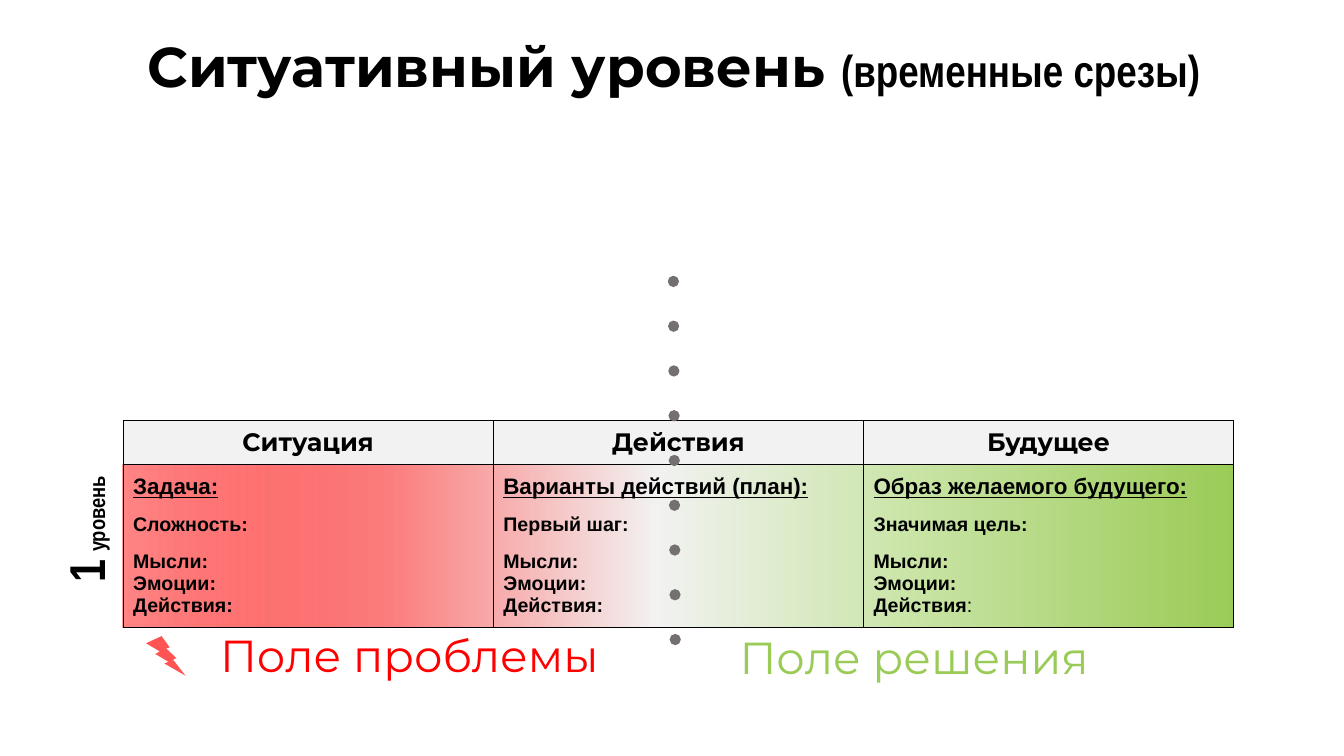
"""Build a slide with a table of time slices for the situational level."""
from dataclasses import dataclass

from lxml import etree
from pptx import Presentation
from pptx.dml.color import RGBColor
from pptx.enum.shapes import MSO_CONNECTOR, MSO_SHAPE
from pptx.enum.text import MSO_ANCHOR, MSO_AUTO_SIZE, PP_ALIGN
from pptx.oxml.ns import qn
from pptx.util import Cm, Pt

BOLT = MSO_SHAPE.LIGHTNING_BOLT
RECTANGLE = MSO_SHAPE.RECTANGLE
STRAIGHT = MSO_CONNECTOR.STRAIGHT
TOP, MIDDLE = MSO_ANCHOR.TOP, MSO_ANCHOR.MIDDLE
GROW = MSO_AUTO_SIZE.SHAPE_TO_FIT_TEXT
LEFT, CENTER = PP_ALIGN.LEFT, PP_ALIGN.CENTER

COLORS = {
    "black": "000000",
    "red": "FF0000",
    "rose": "FB8181",
    "light": "F2F2F2",
    "pale green": "CBE5A9",
    "green": "9ACB56",
    "gray": "757070",
}
DISPLAY, NARROW, BODY = "Montserrat", "Arial Narrow", "Arial"
TABLE_LEFT, TABLE_TOP = 3.1, 10.6
COLUMN_WIDTH, HEADER_HEIGHT, BODY_HEIGHT = 9.33, 1.1, 4.1
GROUP_GAP = Pt(10.35)


@dataclass
class Span:
    """A stretch of text in one style."""
    text: str
    size: int
    font: str = BODY
    color: str = "black"
    bold: bool = True
    underline: bool = False


@dataclass
class Label:
    """A one-line text box, measured in centimetres."""
    left: float
    top: float
    width: float
    height: float
    spans: list[Span]
    align: PP_ALIGN = CENTER
    rotation: int = 0


@dataclass
class Slice:
    """A column of the table."""
    heading: str
    subject: str
    detail: str
    colon_bold: bool = True


@dataclass
class Stop:
    """A point of the gradient, in percent."""
    position: int
    color: str
    opacity: int = 100


LABELS = [
    Label(0.25, 12.14, 3.78, 1.8, [Span("1", 36, NARROW), Span(" ", 24, NARROW),
                                   Span("уровень", 16, NARROW)], LEFT, 270),
    Label(16.08, 15.72, 13.92, 1.63, [Span("Поле решения", 32, DISPLAY, "green", False)]),
    Label(4.01, 15.67, 12.62, 1.63, [Span("Поле проблемы", 32, DISPLAY, "red", False)]),
]
SLICES = [
    Slice("Ситуация", "Задача:", "Сложность:"),
    Slice("Действия", "Варианты действий (план):", "Первый шаг:"),
    Slice("Будущее", "Образ желаемого будущего:", "Значимая цель:", False),
]
STOPS = [Stop(0, "red", 47), Stop(25, "rose"), Stop(48, "light"),
         Stop(70, "pale green"), Stop(100, "green")]


def rgb(name: str) -> RGBColor:
    """Return a named colour."""
    return RGBColor.from_string(COLORS[name])


def add_color(parent, name: str, opacity: int = 100) -> None:
    """Append a colour element with its opacity in percent."""
    color = etree.SubElement(parent, qn("a:srgbClr"), val=COLORS[name])
    if opacity < 100:
        etree.SubElement(color, qn("a:alpha"), val=str(opacity * 1000))


def write(para, spans: list[Span], align: PP_ALIGN = LEFT) -> None:
    """Fill a paragraph run by run."""
    para.alignment = align
    for span in spans:
        run = para.add_run()
        run.text = span.text
        run.font.size = Pt(span.size)
        run.font.name = span.font
        run.font.bold = span.bold
        run.font.underline = span.underline
        run.font.color.rgb = rgb(span.color)


def set_title(page) -> None:
    """Place and fill the title."""
    title = page.shapes.title
    title.left, title.top, title.width, title.height = Cm(1.37), Cm(1.4), Cm(31.24), Cm(1.17)
    frame = title.text_frame
    frame.auto_size, frame.vertical_anchor, frame.word_wrap = GROW, TOP, True
    para = frame.paragraphs[0]
    para.line_spacing = 0.5
    write(para, [Span("Ситуативный уровень ", 40, DISPLAY),
                 Span("(временные срезы)", 32, NARROW)], CENTER)


def add_label(page, label: Label) -> None:
    """Add a text box."""
    box = page.shapes.add_textbox(Cm(label.left), Cm(label.top), Cm(label.width), Cm(label.height))
    box.rotation = label.rotation
    frame = box.text_frame
    frame.word_wrap, frame.auto_size, frame.vertical_anchor = True, GROW, MIDDLE
    write(frame.paragraphs[0], label.spans, label.align)


def add_plain_shape(page, kind: MSO_SHAPE, left: float, top: float, width: float, height: float):
    """Add a shape without outline or shadow."""
    shape = page.shapes.add_shape(kind, Cm(left), Cm(top), Cm(width), Cm(height))
    shape.shadow.inherit = False
    shape.line.fill.background()
    return shape


def add_bolt(page) -> None:
    """Add the translucent lightning bolt."""
    bolt = add_plain_shape(page, BOLT, 3.68, 16.03, 1, 1)
    bolt.fill.solid()
    bolt.fill.fore_color.rgb = rgb("red")
    color = bolt.element.spPr.find(qn("a:solidFill"))[0]
    etree.SubElement(color, qn("a:alpha"), val="67000")


def add_backdrop(page) -> None:
    """Add the red to green band behind the table body."""
    band = add_plain_shape(page, RECTANGLE, TABLE_LEFT, TABLE_TOP + HEADER_HEIGHT,
                           COLUMN_WIDTH * len(SLICES), BODY_HEIGHT)
    band.fill.gradient()
    band.fill.gradient_angle = 0
    stops = band.element.spPr.find(qn("a:gradFill")).find(qn("a:gsLst"))
    for old in list(stops):
        stops.remove(old)
    for stop in STOPS:
        point = etree.SubElement(stops, qn("a:gs"), pos=str(stop.position * 1000))
        add_color(point, stop.color, stop.opacity)


def format_cell(cell) -> None:
    """Give a cell thin black borders and centre it vertically."""
    cell.vertical_anchor = MIDDLE
    properties = cell._tc.get_or_add_tcPr()
    for side in ("L", "R", "T", "B"):
        line = etree.SubElement(properties, qn(f"a:ln{side}"), w=str(Pt(0.75)))
        add_color(etree.SubElement(line, qn("a:solidFill")), "black")


def add_slices(page) -> None:
    """Add the table, one column per slice."""
    table = page.shapes.add_table(2, len(SLICES), Cm(TABLE_LEFT), Cm(TABLE_TOP),
                                  Cm(COLUMN_WIDTH * len(SLICES)),
                                  Cm(HEADER_HEIGHT + BODY_HEIGHT)).table
    table.first_row = table.horz_banding = False
    table.rows[0].height, table.rows[1].height = Cm(HEADER_HEIGHT), Cm(BODY_HEIGHT)
    for index, item in enumerate(SLICES):
        table.columns[index].width = Cm(COLUMN_WIDTH)
        header, body = table.cell(0, index), table.cell(1, index)
        format_cell(header)
        header.fill.solid()
        header.fill.fore_color.rgb = rgb("light")
        write(header.text_frame.paragraphs[0], [Span(item.heading, 18, DISPLAY)], CENTER)
        format_cell(body)
        body.fill.background()
        frame = body.text_frame
        write(frame.paragraphs[0], [Span(item.subject, 16, underline=True)])
        for text in (item.detail, "Мысли:", "Эмоции:"):
            para = frame.add_paragraph()
            para.space_before = Pt(0) if text == "Эмоции:" else GROUP_GAP
            write(para, [Span(text, 14)])
        write(frame.add_paragraph(), [Span("Действия", 14), Span(":", 14, bold=item.colon_bold)])


def add_divider(page) -> None:
    """Add the line of round dots between the two fields."""
    divider = page.shapes.add_connector(STRAIGHT, Cm(16.97), Cm(7.09), Cm(17.02), Cm(16.81))
    divider.line.width = Pt(8)
    divider.line.color.rgb = rgb("gray")
    properties = divider.element.spPr
    line = properties.find(qn("a:ln"))
    line.set("cap", "rnd")
    etree.SubElement(line, qn("a:prstDash"), val="dot")
    etree.SubElement(properties, qn("a:effectLst"))


def main() -> None:
    """Build and save the deck."""
    deck = Presentation()
    deck.slide_width, deck.slide_height = Cm(33.87), Cm(19.05)
    page = deck.slides.add_slide(deck.slide_layouts[5])
    set_title(page)
    for label in LABELS:
        add_label(page, label)
    add_bolt(page)
    add_backdrop(page)
    add_slices(page)
    add_divider(page)
    deck.save("out.pptx")


if __name__ == "__main__":
    main()
